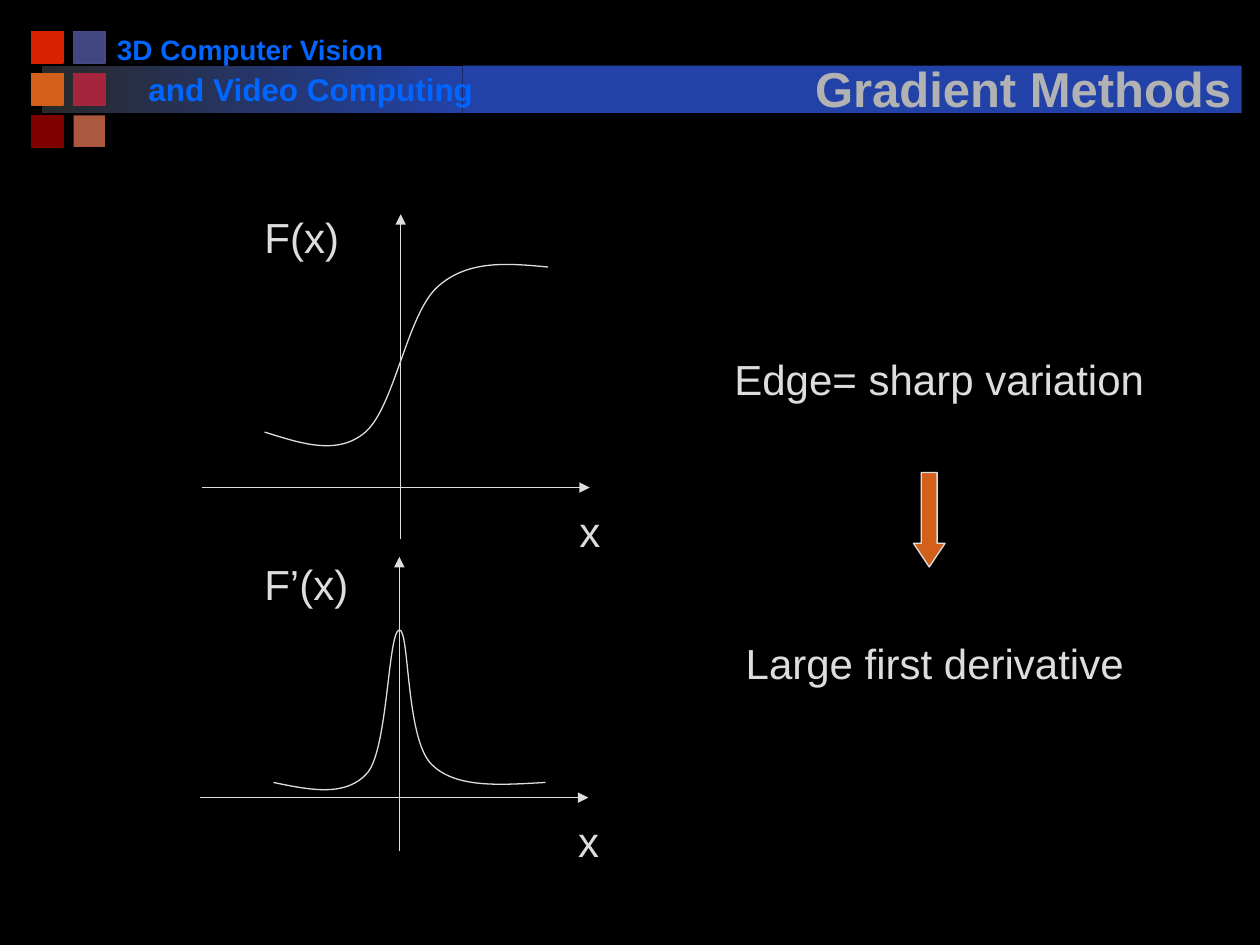
from dataclasses import dataclass

from lxml.etree import SubElement
from pptx import Presentation
from pptx.dml.color import RGBColor
from pptx.enum.shapes import MSO_CONNECTOR, MSO_SHAPE
from pptx.enum.text import MSO_ANCHOR, PP_ALIGN
from pptx.oxml import parse_xml
from pptx.oxml.ns import nsdecls, qn
from pptx.util import Inches, Pt

COLUMNS, ROWS = 100, 75  # square cells on a 10 by 7.5 inch slide
CELL = Inches(10) / COLUMNS
FONT = "Arial"
COLORS = {
    "background": "000000", "ink": "DDDDDD", "title": "B2B2B2", "course": "0066FF",
    "band": "2242A8", "band_start": "292929", "orange": "D2601A", "red": "D82204",
    "violet": "424680", "violet_line": "454A85", "crimson": "A5253D",
    "maroon": "800000", "clay": "AA583E",
}


@dataclass(frozen=True)
class Label:
    text: str
    left: float
    top: float
    width: float
    height: float = 5
    size: int = 24
    color: str = "ink"
    bold: bool = False
    wrap: bool = False


@dataclass(frozen=True)
class Square:
    column: int
    row: int
    fill: str
    line: str | None


@dataclass(frozen=True)
class Plot:
    name: Label
    origin: tuple[float, float]
    top: float
    bottom: float
    curve: list[tuple[float, float]]  # start, then three Bézier points per arc


SQUARES = [
    Square(1, 0, "violet", "violet_line"), Square(1, 1, "crimson", "crimson"),
    Square(0, 2, "maroon", "maroon"), Square(0, 0, "red", "red"),
    Square(0, 1, "orange", "orange"), Square(1, 2, "clay", None),
]
COURSE = [
    Label("3D Computer Vision", 8.3, 2.1, 23.2, 3.7, 16, "course", True),
    Label("and Video Computing", 10.8, 5.1, 28.3, 4, 18, "course", True, True),
]
TITLE = Label("Gradient Methods", 62.4, 3.1, 37.6, 6.7, 28, "title", True, True)
STATEMENTS = [
    Label("Edge= sharp variation", 57.3, 27.6, 34.6),
    Label("Large first derivative", 58.2, 50.1, 32),
]
PLOTS = [
    Plot(Label("F(x)", 20, 16.3, 7.9), (31.8, 38.7), 17, 42.8,
         [(21, 34.3), (23.9, 35.2), (26.8, 36.2), (29, 34.3), (31.3, 32.3),
          (32.3, 25), (34.7, 22.8), (37.1, 20.6), (40.3, 20.9), (43.5, 21.2)]),
    Plot(Label("F’(x)", 20, 43.8, 8.7), (31.7, 63.3), 44.2, 67.5,
         [(21.7, 62.1), (24.6, 62.7), (27.5, 63.3), (29.2, 61.3), (30.8, 59.3),
          (30.8, 50.1), (31.7, 50), (32.5, 49.9), (32.2, 58.5), (34.2, 60.6),
          (36.1, 62.6), (39.7, 62.3), (43.3, 62.1)]),
]


def cells(*lengths: float) -> list[int]:
    return [round(length * CELL) for length in lengths]


def rgb(name: str) -> RGBColor:
    return RGBColor.from_string(COLORS[name])


def style_line(shape, color: str | None, width: float = 0.75) -> None:
    if color is None:
        shape.line.fill.background()
        return
    shape.line.color.rgb = rgb(color)
    shape.line.width = Pt(width)


def add_block(slide, kind, box: tuple, fill: str, line: str | None = None,
              width: float = 0.75):
    shape = slide.shapes.add_shape(kind, *cells(*box))
    shape.shadow.inherit = False
    shape.fill.solid()
    shape.fill.fore_color.rgb = rgb(fill)
    style_line(shape, line, width)
    return shape


def add_label(slide, label: Label):
    box = slide.shapes.add_textbox(
        *cells(label.left, label.top, label.width, label.height))
    box.text_frame.word_wrap = label.wrap
    run = box.text_frame.paragraphs[0].add_run()
    run.text = label.text
    run.font.name, run.font.size, run.font.bold = FONT, Pt(label.size), label.bold
    run.font.color.rgb = rgb(label.color)
    return box


def add_title(slide, label: Label) -> None:
    frame = add_label(slide, label).text_frame
    frame.vertical_anchor = MSO_ANCHOR.BOTTOM
    frame.paragraphs[0].alignment = PP_ALIGN.CENTER
    # Text shadow, placed right after the fill of the run
    properties = frame.paragraphs[0].runs[0].font._element
    properties.find(qn("a:solidFill")).addnext(parse_xml(
        f'<a:effectLst {nsdecls("a")}><a:outerShdw dist="35921" dir="2700000">'
        '<a:srgbClr val="000000"/></a:outerShdw></a:effectLst>'))


def add_axis(slide, start: tuple, end: tuple) -> None:
    axis = slide.shapes.add_connector(MSO_CONNECTOR.STRAIGHT, *cells(*start, *end))
    style_line(axis, "ink")
    SubElement(axis.line._get_or_add_ln(), qn("a:tailEnd"), type="triangle")
    SubElement(axis._element.spPr, qn("a:effectLst"))


def add_curve(slide, points: list[tuple[float, float]]) -> None:
    start, *rest = [tuple(cells(*point)) for point in points]
    builder = slide.shapes.build_freeform(*start)
    builder.add_line_segments(rest, close=False)
    shape = builder.convert_to_shape()
    shape.shadow.inherit = False
    shape.fill.background()
    style_line(shape, "ink")
    # Turn each three straight segments into one Bézier arc
    outline = next(shape._element.iter(qn("a:path")))
    segments = outline.findall(qn("a:lnTo"))
    for first in range(0, len(segments), 3):
        arc = SubElement(outline, qn("a:cubicBezTo"))
        for segment in segments[first:first + 3]:
            arc.append(segment[0])
            outline.remove(segment)


def add_plot(slide, plot: Plot) -> None:
    x, y = plot.origin
    add_axis(slide, (x - 15.8, y), (x + 15, y))
    add_axis(slide, (x, plot.bottom), (x, plot.top))
    add_label(slide, plot.name)
    add_label(slide, Label("x", x + 13.2, y + 0.95, 3.7))
    add_curve(slide, plot.curve)


def main() -> None:
    presentation = Presentation()
    presentation.slide_width, presentation.slide_height = cells(COLUMNS, ROWS)
    slide = presentation.slides.add_slide(presentation.slide_layouts[6])
    slide.background.fill.solid()
    slide.background.fill.fore_color.rgb = rgb("background")

    # Header band and squares
    fade = add_block(slide, MSO_SHAPE.RECTANGLE, (3.3, 5.2, 33.4, 3.75), "band")
    fade.fill.gradient()
    fade.fill.gradient_angle = 0
    for stop, color in zip(fade.fill.gradient_stops, ("band_start", "band")):
        stop.color.rgb = rgb(color)
    for square in SQUARES:
        place = (2.5 + square.column * 10 / 3, 2.5 + square.row * 10 / 3, 2.5, 2.5)
        add_block(slide, MSO_SHAPE.RECTANGLE, place, square.fill, square.line, 1)
    add_block(slide, MSO_SHAPE.RECTANGLE, (36.7, 5.2, 61.85, 3.75), "band")

    # Header text
    for label in COURSE:
        add_label(slide, label)
    add_title(slide, TITLE)

    # Function and its derivative
    for plot in PLOTS:
        add_plot(slide, plot)

    # Conclusion
    for label in STATEMENTS:
        add_label(slide, label)
    arrow = add_block(slide, MSO_SHAPE.DOWN_ARROW, (72.5, 37.5, 2.5, 7.5), "orange", "ink")
    arrow.adjustments[0], arrow.adjustments[1] = 0.5, 0.75

    presentation.save("out.pptx")


if __name__ == "__main__":
    main()
